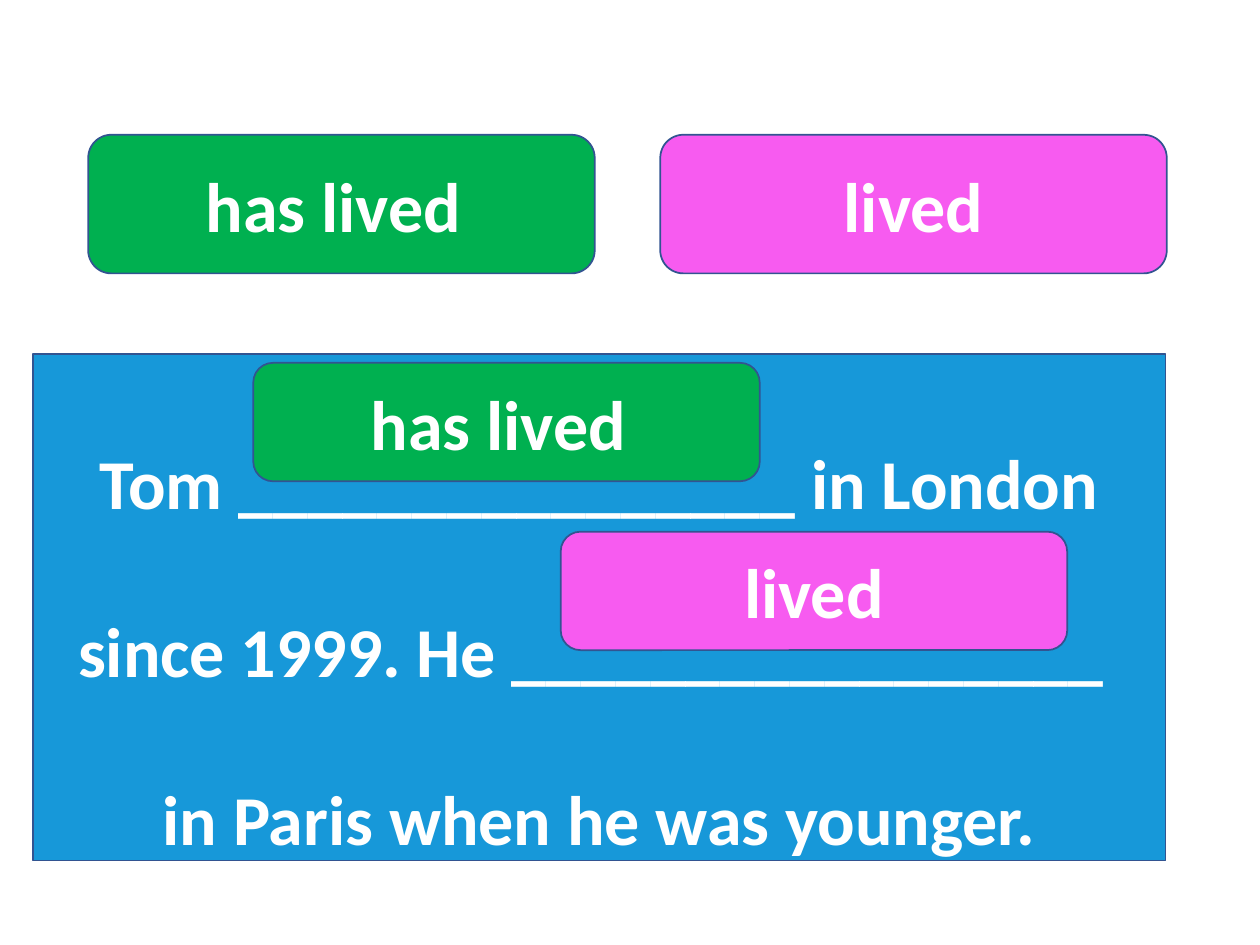
from pptx import Presentation
from pptx.dml.color import RGBColor
from pptx.enum import shapes, text
from pptx.util import Inches, Pt

GREEN = RGBColor(0x00, 0xB0, 0x50)
PINK = RGBColor(0xF7, 0x5B, 0xF0)
BLUE = RGBColor(0x17, 0x98, 0xD9)
OUTLINE = RGBColor(0x32, 0x54, 0x91)
WHITE = RGBColor(0xFF, 0xFF, 0xFF)
CARD_W = 4.02
ANSWERS = [("has lived ", GREEN), ("lived", PINK)]
SENTENCE = ["Tom ________________ in London since 1999. He _________________ ",
            "in Paris when he was younger."]


def add_box(s, kind, box, fill, lines, spacing=None):
    sp = s.shapes.add_shape(kind, *(Inches(v) for v in box))
    sp.shadow.inherit = False
    sp.fill.solid()
    sp.fill.fore_color.rgb = fill
    sp.line.color.rgb = OUTLINE
    sp.line.width = Pt(1)
    tf = sp.text_frame
    tf.word_wrap = True
    tf.vertical_anchor = text.MSO_ANCHOR.MIDDLE
    p = tf.paragraphs[0]
    p.alignment = text.PP_ALIGN.CENTER
    p.line_spacing = spacing
    for i, line in enumerate(lines):
        if i:
            p.add_line_break()
        r = p.add_run()
        r.text = line
        r.font.name = "Calibri"
        r.font.size = Pt(40)
        r.font.bold = True
        r.font.color.rgb = WHITE


def add_cards(s, left, top, height, step_x, step_y):
    for i, (wording, fill) in enumerate(ANSWERS):
        box = (left + i * step_x, top + i * step_y, CARD_W, height)
        add_box(s, shapes.MSO_SHAPE.ROUNDED_RECTANGLE, box, fill, [wording])


def add_exercise(s, left, top, width, height):
    add_box(s, shapes.MSO_SHAPE.RECTANGLE, (left, top, width, height),
            BLUE, SENTENCE, spacing=2.0)
    add_cards(s, left + 1.75, top + 0.07, 0.94, step_x=2.44, step_y=1.34)


def main():
    prs = Presentation()
    prs.slide_width, prs.slide_height = Inches(10), Inches(7.5)
    s = prs.slides.add_slide(prs.slide_layouts[6])
    add_cards(s, 0.7, 1.07, 1.1, step_x=4.54, step_y=0)
    add_exercise(s, 0.26, 2.81, 8.99, 4.02)
    prs.save("out.pptx")


if __name__ == "__main__":
    main()
